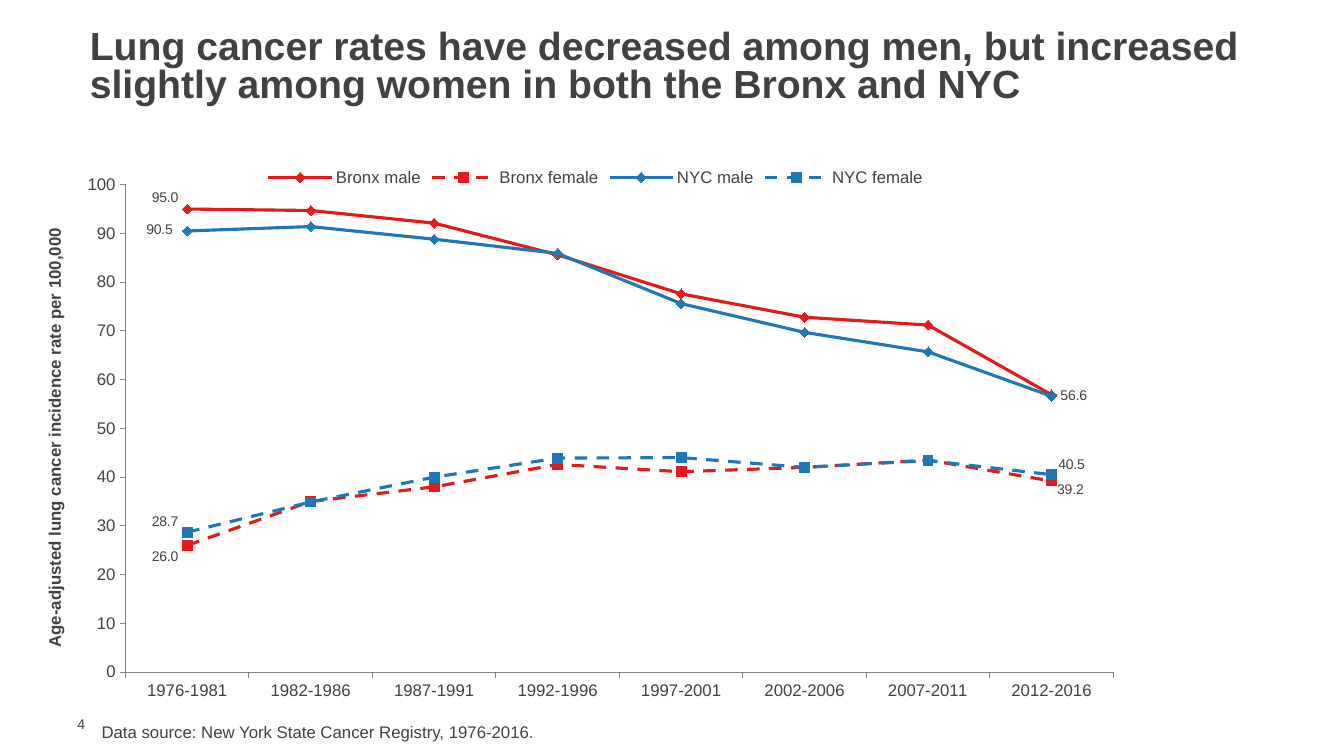
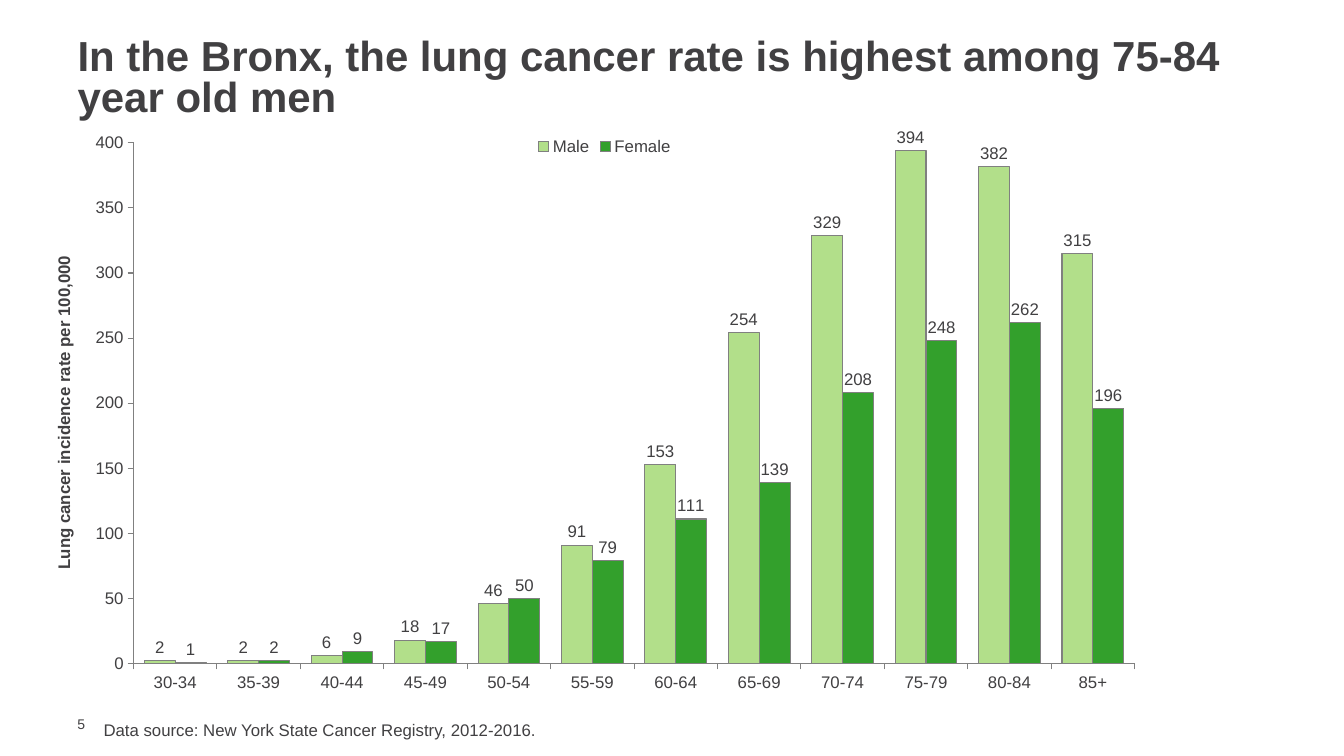
from lxml import etree
from pptx import Presentation
from pptx.chart.data import CategoryChartData
from pptx.dml.color import RGBColor
from pptx.enum.chart import (XL_CHART_TYPE, XL_LABEL_POSITION, XL_LEGEND_POSITION,
                             XL_MARKER_STYLE, XL_TICK_MARK)
from pptx.enum.dml import MSO_LINE
from pptx.enum.text import MSO_ANCHOR, MSO_AUTO_SIZE, PP_ALIGN
from pptx.oxml import parse_xml
from pptx.oxml.ns import qn
from pptx.util import Cm, Pt

COLORS = {
    "text": "414042",
    "axis": "808080",
    "bronx": "E31A1C",
    "nyc": "1F78B4",
    "male": "B2DF8A",
    "female": "33A02C",
}
FONT = "Arial"
CHART_NS = "http://schemas.openxmlformats.org/drawingml/2006/chart"
LEADER_LINES = (
    f'<c:extLst xmlns:c="{CHART_NS}"><c:ext uri="{{CE6537A1-D6FC-4f65-9D91-7224C49458BB}}" '
    'xmlns:c15="http://schemas.microsoft.com/office/drawing/2012/chart">'
    '<c15:showLeaderLines val="1"/></c:ext></c:extLst>'
)

PAGES = [
    {
        "number": "4",
        "title": "Lung cancer rates have decreased among men, but increased "
                 "slightly among women in both the Bronx and NYC",
        "title_box": (2.01, 0.64, 29.85, 2.16),
        "title_size": 28,
        "source": "Data source: New York State Cancer Registry, 1976-2016.",
        "source_at": (2.31, 18.06),
        "chart_type": XL_CHART_TYPE.LINE_MARKERS,
        "chart_box": (1.04, 3.96, 27.94, 14.17),
        "plot_area": (0.076, 0.049, 0.891, 0.867),
        "axis_title": "Age-adjusted lung cancer incidence rate per 100,000",
        "axis_scale": (100, 10),
        "value_format": "0.0",
        "categories": ["1976-1981", "1982-1986", "1987-1991", "1992-1996",
                       "1997-2001", "2002-2006", "2007-2011", "2012-2016"],
        "series": {
            "Bronx male": [95, 94.7, 92.1, 85.6, 77.6, 72.8, 71.2, 56.9],
            "Bronx female": [26, 35, 38, 42.6, 41.1, 42, 43.5, 39.2],
            "NYC male": [90.5, 91.4, 88.8, 85.9, 75.6, 69.7, 65.7, 56.6],
            "NYC female": [28.7, 34.9, 40, 43.9, 44, 42, 43.4, 40.5],
        },
    },
    {
        "number": "5",
        "title": "In the Bronx, the lung cancer rate is highest among 75-84 year old men",
        "title_box": (1.7, 0.86, 30.48, 2.31),
        "title_size": 30,
        "source": "Data source: New York State Cancer Registry, 2012-2016.",
        "source_at": (2.36, 18.01),
        "chart_type": XL_CHART_TYPE.COLUMN_CLUSTERED,
        "chart_box": (1.27, 3.18, 27.94, 14.53),
        "plot_area": (0.075, 0.029, 0.903, 0.903),
        "axis_title": "Lung cancer incidence rate per 100,000",
        "axis_scale": (400, 50),
        "value_format": "0",
        "categories": ["30-34", "35-39", "40-44", "45-49", "50-54", "55-59",
                       "60-64", "65-69", "70-74", "75-79", "80-84", "85+"],
        "series": {
            "Male": [2, 2, 6, 18, 46, 91, 153, 254, 329, 394, 382, 315],
            "Female": [1, 2, 8, 17, 50, 79, 111, 139, 208, 248, 262, 196],
        },
    },
]
PAGES[1]["series"]["Female"][2] = 9

POINT_LABELS = {
    "Bronx male": {0: (0, -0.02)},
    "Bronx female": {0: (0, 0.02), 7: (-0.003, 0.016)},
    "NYC male": {0: (-0.005, -0.002), 7: (0, 0)},
    "NYC female": {0: (0, -0.018), 7: (-0.002, -0.018)},
}


def style_font(font, size, bold=False):
    font.name = FONT
    font.size = Pt(size)
    font.bold = bold
    font.color.rgb = RGBColor.from_string(COLORS["text"])


def manual_layout(x, y, width=None, height=None):
    layout = etree.Element(qn("c:layout"))
    manual = etree.SubElement(layout, qn("c:manualLayout"))
    values = [("x", x), ("y", y)]
    if width is not None:
        values = [("layoutTarget", "inner"), ("xMode", "edge"), ("yMode", "edge"),
                  *values, ("w", width), ("h", height)]
    for name, value in values:
        etree.SubElement(manual, qn(f"c:{name}")).set("val", str(value))
    return parse_xml(etree.tostring(layout))


presentation = Presentation()
presentation.slide_width = Cm(33.87)
presentation.slide_height = Cm(19.05)
charts = []

for page in PAGES:
    slide = presentation.slides.add_slide(presentation.slide_layouts[5])

    title = slide.shapes.title
    title.left, title.top, title.width, title.height = map(Cm, page["title_box"])
    title.text_frame.text = page["title"]
    title.text_frame.word_wrap = True
    title.text_frame.auto_size = MSO_AUTO_SIZE.NONE
    title.text_frame.vertical_anchor = MSO_ANCHOR.MIDDLE
    paragraph = title.text_frame.paragraphs[0]
    paragraph.alignment = PP_ALIGN.LEFT
    paragraph.line_spacing = 0.8
    style_font(paragraph.font, page["title_size"], True)

    number_box = slide.shapes.add_textbox(Cm(1.7), Cm(18.03), Cm(1.09), Cm(0.43))
    number_frame = number_box.text_frame
    number_frame.text = page["number"]
    number_frame.vertical_anchor = MSO_ANCHOR.MIDDLE
    number_frame.margin_top = number_frame.margin_right = number_frame.margin_bottom = 0
    style_font(number_frame.paragraphs[0].font, 10)

    source_left, source_top = map(Cm, page["source_at"])
    source_box = slide.shapes.add_textbox(source_left, source_top, Cm(25.2), Cm(0.77))
    source_box.text_frame.text = page["source"]
    source_box.text_frame.word_wrap = True
    style_font(source_box.text_frame.paragraphs[0].font, 12)

    chart_data = CategoryChartData(number_format=page["value_format"])
    chart_data.categories = page["categories"]
    for name, values in page["series"].items():
        chart_data.add_series(name, values)
    chart = slide.shapes.add_chart(
        page["chart_type"], *map(Cm, page["chart_box"]), chart_data).chart
    charts.append(chart)
    chart.has_title = False
    style_font(chart.font, 10)
    chart.has_legend = True
    chart.legend.position = XL_LEGEND_POSITION.TOP
    chart.legend.include_in_layout = False
    style_font(chart.legend.font, 12)

    plot_area = chart.element.find(f".//{qn('c:plotArea')}")
    for layout in plot_area.findall(qn("c:layout")):
        plot_area.remove(layout)
    plot_area.insert(0, manual_layout(*page["plot_area"]))

    for axis in (chart.category_axis, chart.value_axis):
        axis.has_major_gridlines = False
        axis.major_tick_mark = XL_TICK_MARK.OUTSIDE
        axis.minor_tick_mark = XL_TICK_MARK.NONE
        axis.format.line.color.rgb = RGBColor.from_string(COLORS["axis"])
        axis.format.line.width = Pt(0.75)
        style_font(axis.tick_labels.font, 12)
    value_axis = chart.value_axis
    value_axis.minimum_scale = 0
    value_axis.maximum_scale, value_axis.major_unit = page["axis_scale"]
    value_axis.tick_labels.number_format = "0"
    value_axis.tick_labels.number_format_is_linked = False
    axis_title = value_axis.axis_title.text_frame
    axis_title.text = page["axis_title"]
    style_font(axis_title.paragraphs[0].font, 12, True)
    body = value_axis.axis_title._element.find(f".//{qn('a:bodyPr')}")
    body.set("rot", "-5400000")
    body.set("vert", "horz")

line_chart, column_chart = charts

for series in line_chart.plots[0].series:
    place, sex = series.name.split()
    color = RGBColor.from_string(COLORS[place.lower()])
    series.smooth = False
    series.format.line.color.rgb = color
    series.format.line.width = Pt(2.25)
    if sex == "female":
        series.format.line.dash_style = MSO_LINE.DASH
    marker = series.marker
    marker.style = XL_MARKER_STYLE.DIAMOND if sex == "male" else XL_MARKER_STYLE.SQUARE
    marker.size = 7
    marker.format.fill.solid()
    marker.format.fill.fore_color.rgb = color
    marker.format.line.color.rgb = color

    labels = series.data_labels
    labels.show_value = False
    labels.number_format = "0.0"
    labels.number_format_is_linked = False
    for index, offset in POINT_LABELS[series.name].items():
        label = series.points[index].data_label
        style_font(label.font, 10)
        label.position = XL_LABEL_POSITION.LEFT if index == 0 else XL_LABEL_POSITION.RIGHT
        if any(offset):
            element = series._element.xpath(f"c:dLbls/c:dLbl[c:idx/@val='{index}']")[0]
            element.insert(1, manual_layout(*offset))
    labels._element.append(parse_xml(LEADER_LINES))

columns = column_chart.plots[0]
columns.gap_width = 70
columns.overlap = 0
columns.vary_by_categories = False
for series in columns.series:
    series.format.fill.solid()
    series.format.fill.fore_color.rgb = RGBColor.from_string(COLORS[series.name.lower()])
    series.format.line.color.rgb = RGBColor.from_string(COLORS["axis"])
    series.format.line.width = Pt(0.75)
    labels = series.data_labels
    labels.show_value = True
    labels.number_format = "0"
    labels.number_format_is_linked = False
    labels.position = XL_LABEL_POSITION.OUTSIDE_END
    style_font(labels.font, 12)

presentation.save("out.pptx")
